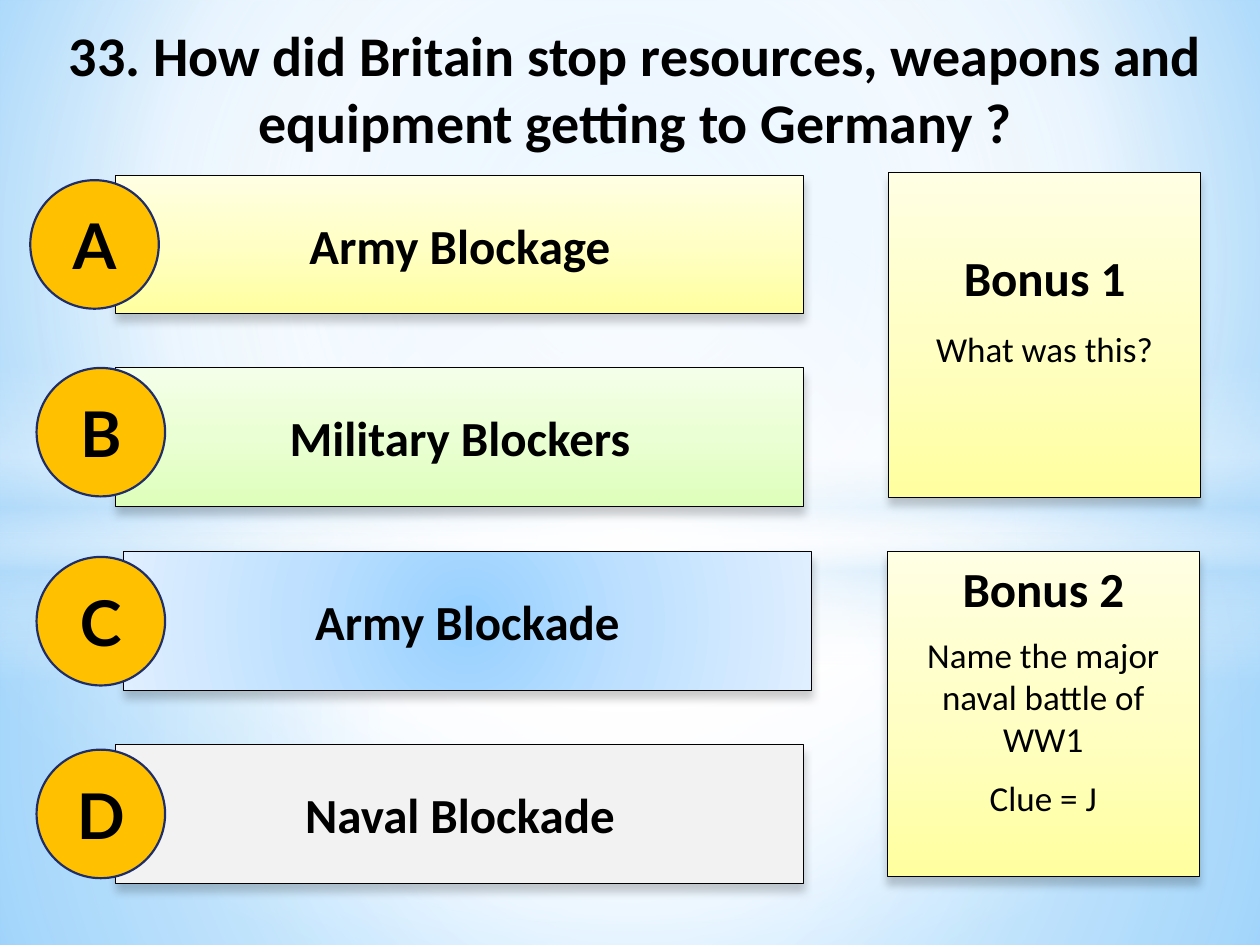
"""Build a quiz slide with four lettered answers and two bonus cards."""
from dataclasses import dataclass
from typing import Optional, Union

from lxml import etree
from pptx import Presentation
from pptx.dml.color import RGBColor
from pptx.enum.shapes import MSO_SHAPE
from pptx.enum.text import MSO_ANCHOR, MSO_AUTO_SIZE, PP_ALIGN
from pptx.oxml.ns import qn
from pptx.util import Inches, Pt

RECTANGLE, OVAL = MSO_SHAPE.RECTANGLE, MSO_SHAPE.OVAL
TOP, MIDDLE = MSO_ANCHOR.TOP, MSO_ANCHOR.MIDDLE
CENTER = PP_ALIGN.CENTER
NO_AUTOFIT = MSO_AUTO_SIZE.NONE
TITLE_ONLY = 5
CENTRED = (50, 50, 50, 50)


@dataclass(frozen=True)
class Gradient:
    """Stops of (position, colour, opacity), linear by angle or circular by focus."""
    stops: tuple
    angle: Optional[int] = None
    focus: tuple = CENTRED


def solid_stops(*colours: str) -> tuple:
    """Space three opaque colours evenly."""
    return tuple((50 * index, colour, 100) for index, colour in enumerate(colours))


@dataclass(frozen=True)
class Theme:
    """Colours, fonts and type sizes of the slide."""
    ink: str = "000000"
    badge: str = "FFC000"
    badge_line: str = "1F2E69"
    grey: str = "F2F2F2"
    yellow: Gradient = Gradient(solid_stops("FFFFA0", "FFFFC5", "FFFFE3"), 270)
    green: Gradient = Gradient(solid_stops("DEFFBB", "EAFFD3", "F4FFE9"), 270)
    blue: Gradient = Gradient(solid_stops("96D0FF", "BFE1FF", "E0EFFF"))
    sky: Gradient = Gradient(
        ((0, "9ED5FF", 100), (60, "FFFFFF", 100), (100, "5BB9FF", 100)), focus=(20, 10, 20, 60))
    lower_haze: Gradient = Gradient(((0, "FFFFFF", 91), (37, "FFFFFF", 76), (100, "B4DCFA", 79)))
    upper_haze: Gradient = Gradient(((0, "FFFFFF", 89), (48, "FFFFFF", 62), (100, "B4DCFA", 79)))
    horizon: Gradient = Gradient(
        ((0, "FFFFFF", 0), (29, "FFFFFF", 30), (45, "B4DCFA", 40),
         (55, "FFFFFF", 26), (65, "B4DCFA", 60), (100, "FFFFFF", 0)), 90)
    glow: Gradient = Gradient(((0, "FFFFFF", 100), (54, "FFFFFF", 0)))
    body_font: str = "Calibri"
    badge_font: str = "Lato"
    title_size: int = 32
    heading_size: int = 28
    body_size: int = 20
    badge_size: int = 36


THEME = Theme()
Fill = Union[str, Gradient]


@dataclass(frozen=True)
class Answer:
    """One lettered answer with the corners of its bar and badge."""
    letter: str
    text: str
    fill: Fill
    bar: tuple
    badge: tuple


@dataclass(frozen=True)
class Bonus:
    """One bonus card with its heading and body paragraphs."""
    heading: str
    body: tuple
    corner: tuple
    top_inset: float
    gap: float


HAZE = (
    (RECTANGLE, (0, 4.23, 10, 3.27), THEME.lower_haze),
    (RECTANGLE, (0, 0, 10, 4.23), THEME.upper_haze),
    (RECTANGLE, (0, 2.9, 10, 2.5), THEME.horizon),
    (OVAL, (0, 1.75, 10, 5.58), THEME.glow),
)
ANSWERS = (
    Answer("A", "Army Blockage", THEME.yellow, (0.92, 1.39), (0.24, 1.43)),
    Answer("B", "Military Blockers", THEME.green, (0.92, 2.92), (0.29, 2.92)),
    Answer("C", "Army Blockade", THEME.blue, (0.98, 4.38), (0.29, 4.42)),
    Answer("D", "Naval Blockade", THEME.grey, (0.92, 5.91), (0.29, 5.95)),
)
BONUSES = (
    Bonus("Bonus 1", ("What was this?",), (7.05, 1.37), 0.59, 12.5),
    Bonus("Bonus 2", ("Name the major naval battle of WW1", "Clue = J"), (7.04, 4.38), 0.05, 9.5),
)
BAR_SIZE, BADGE_SIZE, CARD_SIZE = (5.46, 1.1), (1.02, 1.02), (2.48, 2.58)


def add_colour(parent, colour: str, opacity: int) -> None:
    """Append an RGB colour with its opacity in percent."""
    node = etree.SubElement(parent, qn("a:srgbClr"), val=colour)
    if opacity < 100:
        etree.SubElement(node, qn("a:alpha"), val=str(opacity * 1000))


def apply_gradient(element, fill, gradient: Gradient) -> None:
    """Give the fill the stops and direction of the gradient."""
    fill.gradient()
    node = element.find(".//" + qn("a:gradFill"))
    for child in list(node):
        node.remove(child)
    stops = etree.SubElement(node, qn("a:gsLst"))
    for position, colour, opacity in gradient.stops:
        stop = etree.SubElement(stops, qn("a:gs"), pos=str(position * 1000))
        add_colour(stop, colour, opacity)
    if gradient.angle is not None:
        etree.SubElement(node, qn("a:lin"), ang=str(gradient.angle * 60000), scaled="0")
    else:
        circle = etree.SubElement(node, qn("a:path"), {"path": "circle"})
        sides = {side: str(part * 1000) for side, part in zip("ltrb", gradient.focus)}
        etree.SubElement(circle, qn("a:fillToRect"), sides)


def add_box(slide, kind, place: tuple, fill: Fill, *, line: Optional[str] = None,
            weight: float = 0.5, shadow: bool = False):
    """Draw a filled shape with an optional outline and soft shadow."""
    box = slide.shapes.add_shape(kind, *map(Inches, place))
    box.shadow.inherit = False
    if isinstance(fill, Gradient):
        apply_gradient(box._element, box.fill, fill)
    else:
        box.fill.solid()
        box.fill.fore_color.rgb = RGBColor.from_string(fill)
    if line:
        box.line.color.rgb = RGBColor.from_string(line)
        box.line.width = Pt(weight)
    else:
        box.line.fill.background()
    if shadow:
        effects = box._element.spPr.find(qn("a:effectLst"))
        outer = etree.SubElement(effects, qn("a:outerShdw"), blurRad=str(Pt(5)),
                                 dist=str(Pt(4)), dir="5400000", rotWithShape="0")
        add_colour(outer, THEME.ink, 20)
    return box


def write_text(box, text: str, *, size: int, font: str = THEME.body_font, bold: bool = True,
               anchor=MIDDLE, gap: float = 0, follow: bool = False) -> None:
    """Write a centred paragraph, after the existing ones when follow is set."""
    frame = box.text_frame
    frame.word_wrap = True
    frame.vertical_anchor = anchor
    para = frame.add_paragraph() if follow else frame.paragraphs[0]
    para.alignment = CENTER
    para.space_before = Pt(gap)
    span = para.add_run()
    span.text = text
    span.font.name = font
    span.font.size = Pt(size)
    span.font.bold = bold
    span.font.color.rgb = RGBColor.from_string(THEME.ink)


def draw_title(slide, text: str) -> None:
    """Place the title above the background shapes."""
    title = slide.shapes.title
    title.left, title.top, title.width, title.height = map(Inches, (0.24, 0.11, 9.61, 1.6))
    write_text(title, text, size=THEME.title_size, anchor=TOP)
    title.text_frame.auto_size = NO_AUTOFIT
    slide.shapes._spTree.append(title._element)


def draw_bar(slide, answer: Answer) -> None:
    """Draw the bar that holds an answer."""
    bar = add_box(slide, RECTANGLE, answer.bar + BAR_SIZE, answer.fill, line=THEME.ink, shadow=True)
    write_text(bar, answer.text, size=THEME.heading_size)


def draw_badge(slide, answer: Answer) -> None:
    """Draw the round badge with the answer's letter."""
    badge = add_box(slide, OVAL, answer.badge + BADGE_SIZE, THEME.badge,
                    line=THEME.badge_line, weight=1.25)
    write_text(badge, answer.letter, size=THEME.badge_size, font=THEME.badge_font)


def draw_bonus(slide, bonus: Bonus) -> None:
    """Draw a bonus card."""
    card = add_box(slide, RECTANGLE, bonus.corner + CARD_SIZE, THEME.yellow,
                   line=THEME.ink, shadow=True)
    frame = card.text_frame
    frame.margin_top = Inches(bonus.top_inset)
    frame.margin_left = frame.margin_right = Inches(0.15)
    write_text(card, bonus.heading, size=THEME.heading_size, anchor=TOP)
    for text in bonus.body:
        write_text(card, text, size=THEME.body_size, bold=False, anchor=TOP,
                   gap=bonus.gap, follow=True)


def main() -> None:
    """Build and save the deck."""
    deck = Presentation()
    deck.slide_width, deck.slide_height = Inches(10), Inches(7.5)
    page = deck.slides.add_slide(deck.slide_layouts[TITLE_ONLY])
    apply_gradient(page._element, page.background.fill, THEME.sky)
    for kind, place, gradient in HAZE:
        add_box(page, kind, place, gradient)
    draw_title(page, "33. How did Britain stop resources, weapons and equipment getting to Germany ?")
    for draw, items in ((draw_bar, ANSWERS), (draw_badge, ANSWERS), (draw_bonus, BONUSES)):
        for item in items:
            draw(page, item)
    deck.save("out.pptx")


if __name__ == "__main__":
    main()
